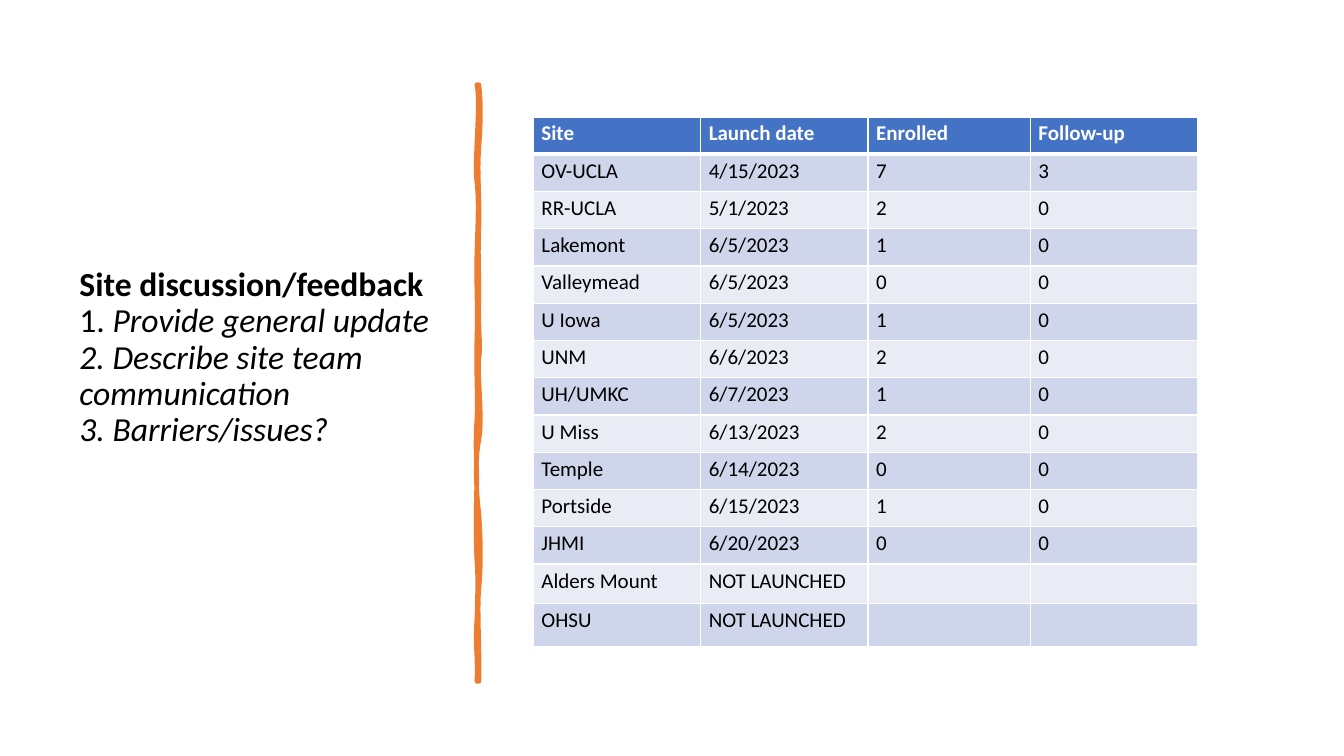
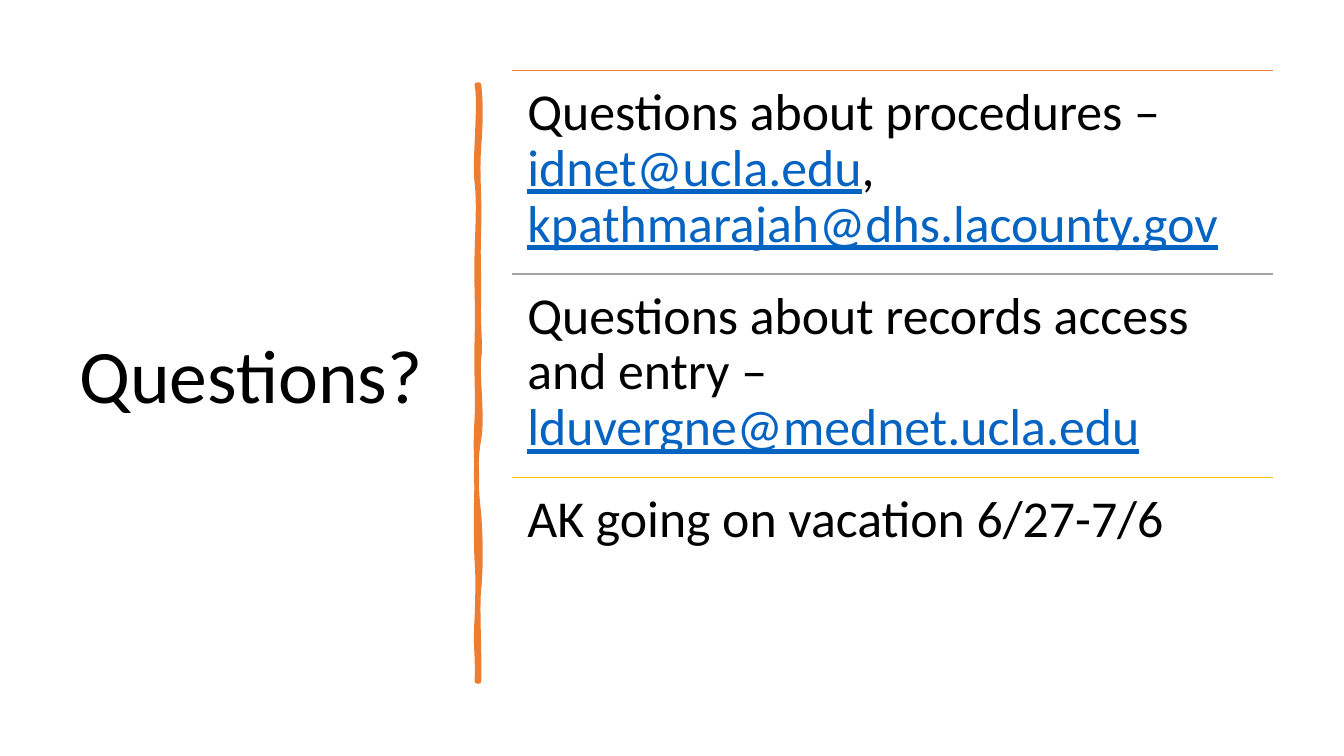
from dataclasses import dataclass, field
from typing import Any

from lxml import etree
from pptx import Presentation, util as u
from pptx.dml.color import RGBColor
from pptx.enum import shapes, text
from pptx.oxml import ns

PX = 9144
FONT = "Calibri"
BLACK = RGBColor(0x00, 0x00, 0x00)
WHITE = RGBColor(0xFF, 0xFF, 0xFF)
ORANGE = RGBColor(0xED, 0x7D, 0x31)
GRAY = RGBColor(0xA5, 0xA5, 0xA5)
GOLD = RGBColor(0xFF, 0xC0, 0x00)
BLUE = RGBColor(0x44, 0x72, 0xC4)
LINK = RGBColor(0x05, 0x63, 0xC1)
BANDS = (RGBColor(0xCF, 0xD5, 0xEA), RGBColor(0xE9, 0xEB, 0xF5))


@dataclass
class Run:
    text: str
    color: RGBColor = BLACK
    form: dict[str, Any] = field(default_factory=dict)


@dataclass
class Box:
    left: int
    top: int
    width: int
    height: int


@dataclass
class Pad:
    side: int
    top: int
    base: int


@dataclass
class Item:
    color: RGBColor
    runs: list[Run]


TITLE = Box(69, 70, 374, 611)
LIST = Box(508, 70, 755, 202)
GRID = Box(529, 116, 659, 526)
COLS = (166, 166, 161, 166)
ROWS = (37,) * 12 + (39, 43)

START = (475, 84)
BRUSH = (
    ((477, 102), (477, 119), (475, 146)),
    ((473, 173), (476, 195), (475, 226)),
    ((474, 257), (475, 262), (475, 294)),
    ((474, 325), (477, 342), (475, 356)),
    ((473, 370), (479, 414), (475, 436)),
    ((471, 457), (472, 484), (475, 510)),
    ((477, 536), (477, 564), (475, 584)),
    ((473, 603), (476, 650), (475, 676)),
    ((474, 676), (473, 676), (473, 676)),
    ((474, 646), (471, 644), (473, 613)),
    ((474, 583), (474, 570), (473, 557)),
    ((472, 544), (472, 495), (473, 477)),
    ((473, 459), (471, 445), (473, 415)),
    ((474, 386), (472, 373), (473, 335)),
    ((474, 298), (472, 281), (473, 250)),
    ((474, 218), (475, 200), (473, 181)),
    ((470, 163), (477, 104), (473, 84)),
    ((474, 84), (474, 84), (475, 84)),
)

ITALIC = {"italic": True}
BOLD = {"bold": True}
UNDER = {"underline": True}

AGENDA = [
    [Run("Site discussion/feedback", form=BOLD)],
    [Run("1. "), Run("Provide general update", form=ITALIC)],
    [Run("2. Describe site team communication", form=ITALIC)],
    [Run("3. Barriers/issues?", form=ITALIC)],
]

SITES = (
    ("Site", "Launch date", "Enrolled", "Follow-up"),
    ("OV-UCLA", "4/15/2023", "7", "3"),
    ("RR-UCLA", "5/1/2023", "2", "0"),
    ("Lakemont", "6/5/2023", "1", "0"),
    ("Valleymead", "6/5/2023", "0", "0"),
    ("U Iowa", "6/5/2023", "1", "0"),
    ("UNM", "6/6/2023", "2", "0"),
    ("UH/UMKC", "6/7/2023", "1", "0"),
    ("U Miss", "6/13/2023", "2", "0"),
    ("Temple", "6/14/2023", "0", "0"),
    ("Portside", "6/15/2023", "1", "0"),
    ("JHMI", "6/20/2023", "0", "0"),
    ("Alders Mount", "NOT LAUNCHED", "", ""),
    ("OHSU", "NOT LAUNCHED", "", ""),
)

ITEMS = (
    Item(ORANGE, [
        Run("Questions about procedures – "),
        Run("idnet@ucla.edu", LINK, UNDER),
        Run(", "),
        Run("kpathmarajah@dhs.lacounty.gov", LINK, UNDER),
    ]),
    Item(GRAY, [
        Run("Questions about records access and entry – "),
        Run("lduvergne@mednet.ucla.edu", LINK, UNDER),
    ]),
    Item(GOLD, [Run("AK going on vacation 6/27-7/6")]),
)


def px(*vals: int) -> list[int]:
    return [val * PX for val in vals]


def area(box: Box) -> list[int]:
    return px(box.left, box.top, box.width, box.height)


def apply(obj: Any, form: dict[str, Any]) -> None:
    for key, val in form.items():
        setattr(obj, key, val)


def inset(obj: Any, pad: Pad) -> None:
    side, top, base = px(pad.side, pad.top, pad.base)
    apply(obj, {"margin_left": side, "margin_right": side,
                "margin_top": top, "margin_bottom": base})


def write(para: Any, lines: list[list[Run]], size: int) -> None:
    for num, runs in enumerate(lines):
        if num:
            para.add_line_break()
        for part in runs:
            run = para.add_run()
            run.text = part.text
            apply(run.font, {"name": FONT, "size": u.Pt(size), **part.form})
            run.font.color.rgb = part.color


def add_text(slide: Any, box: Box, lines: list[list[Run]], size: int,
             pad: Pad, anchor: Any) -> None:
    frame = slide.shapes.add_textbox(*area(box)).text_frame
    apply(frame, {"word_wrap": True, "vertical_anchor": anchor})
    inset(frame, pad)
    para = frame.paragraphs[0]
    para.line_spacing = 0.9
    write(para, lines, size)


def add_title(slide: Any, lines: list[list[Run]], size: int,
              base: int = 5) -> None:
    add_text(slide, TITLE, lines, size, Pad(10, 5, base),
             text.MSO_ANCHOR.MIDDLE)


def add_brush(slide: Any) -> None:
    pen = slide.shapes.build_freeform(*px(*START))
    pen.add_line_segments([px(*curve[-1]) for curve in BRUSH], close=True)
    shape = pen.convert_to_shape()
    edges = list(shape._element.iter(ns.qn("a:lnTo")))
    for edge, curve in zip(edges, BRUSH):
        bend = etree.Element(ns.qn("a:cubicBezTo"))
        for dot in curve:
            x, y = px(*dot)
            etree.SubElement(bend, ns.qn("a:pt"), x=str(x - shape.left),
                             y=str(y - shape.top))
        edge.getparent().replace(edge, bend)
    shape.shadow.inherit = False
    shape.fill.solid()
    shape.fill.fore_color.rgb = ORANGE
    shape.line.color.rgb = ORANGE
    shape.line.width = u.Pt(3.25)
    line = shape.line._get_or_add_ln()
    line.set("cap", "rnd")
    etree.SubElement(line, ns.qn("a:round"))


def add_rule(slide: Any, box: Box, color: RGBColor) -> None:
    rule = slide.shapes.add_connector(
        shapes.MSO_CONNECTOR.STRAIGHT,
        *px(box.left, box.top, box.left + box.width, box.top))
    rule.line.color.rgb = color
    rule.line.width = u.Pt(1)
    etree.SubElement(rule._element.spPr, ns.qn("a:effectLst"))


def add_edges(cell: Any, row: int) -> None:
    props = cell._tc.get_or_add_tcPr()
    wide = {"T": 3 if row == 1 else 1, "B": 3 if row == 0 else 1}
    for num, side in enumerate("LRTB"):
        edge = etree.Element(ns.qn(f"a:ln{side}"),
                             w=str(u.Pt(wide.get(side, 1))))
        fill = etree.SubElement(edge, ns.qn("a:solidFill"))
        etree.SubElement(fill, ns.qn("a:srgbClr"), val=str(WHITE))
        props.insert(num, edge)


def add_sites(slide: Any) -> None:
    table = slide.shapes.add_table(len(ROWS), len(COLS), *area(GRID)).table
    for col, width in zip(table.columns, px(*COLS)):
        col.width = width
    for row, (high, vals) in enumerate(zip(px(*ROWS), SITES)):
        table.rows[row].height = high
        for col, val in enumerate(vals):
            cell = table.cell(row, col)
            inset(cell, Pad(8, 4, 4))
            cell.fill.solid()
            cell.fill.fore_color.rgb = BANDS[(row - 1) % 2] if row else BLUE
            add_edges(cell, row)
            if val:
                run = Run(val, BLACK if row else WHITE, {"bold": row == 0})
                write(cell.text_frame.paragraphs[0], [[run]], 15)


def add_items(slide: Any) -> None:
    for num, item in enumerate(ITEMS):
        box = Box(LIST.left, LIST.top + num * LIST.height,
                  LIST.width, LIST.height)
        add_rule(slide, box, item.color)
        add_text(slide, box, [item.runs], 37, Pad(15, 15, 15),
                 text.MSO_ANCHOR.TOP)


def main() -> None:
    deck = Presentation()
    deck.slide_width, deck.slide_height = px(1333, 750)
    sites, close = (deck.slides.add_slide(deck.slide_layouts[6])
                    for _ in range(2))
    add_title(sites, AGENDA, 24, base=45)
    add_title(close, [[Run("Questions?")]], 54)
    for slide in (sites, close):
        add_brush(slide)
    add_sites(sites)
    add_items(close)
    deck.save("out.pptx")


if __name__ == "__main__":
    main()
